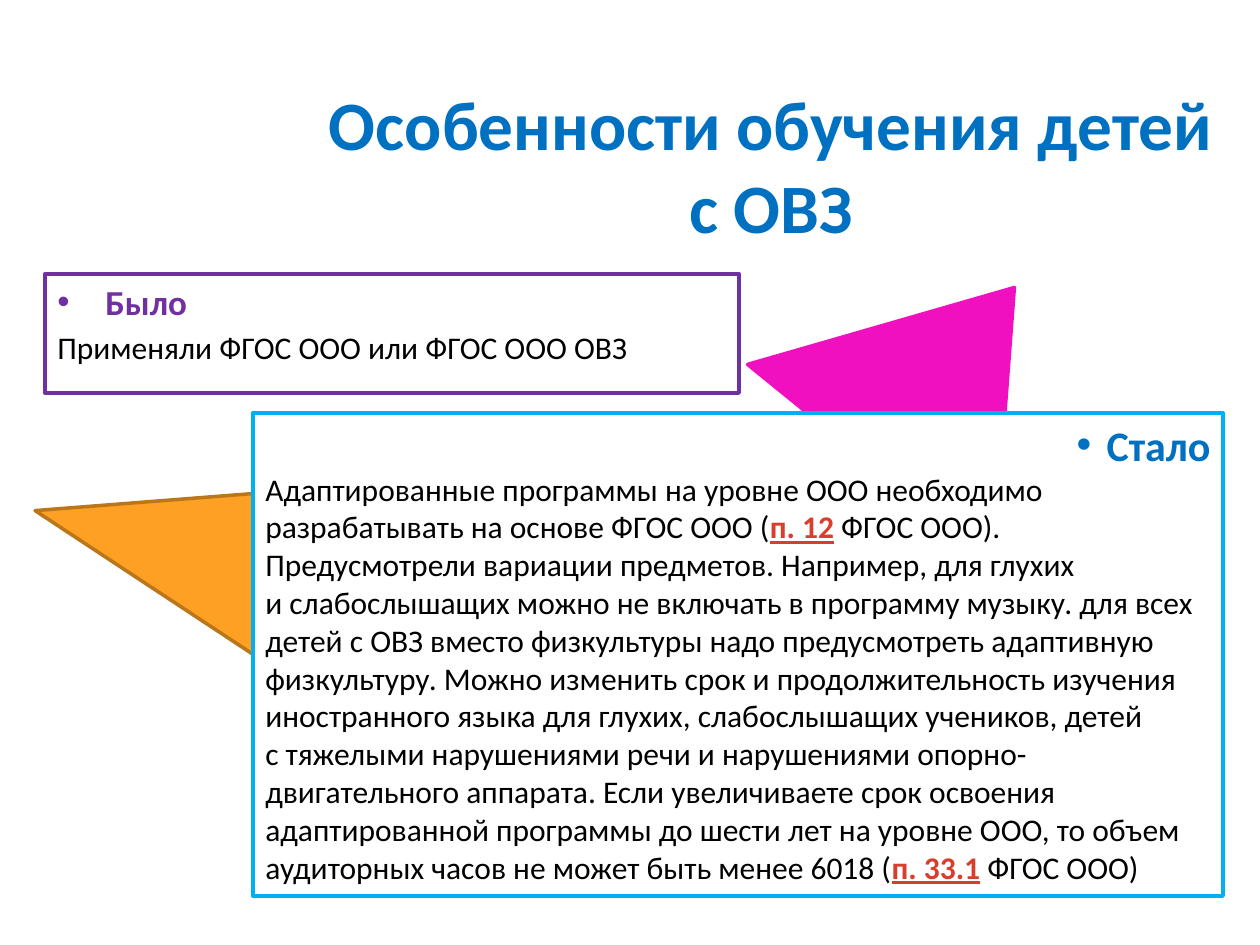
from dataclasses import dataclass

from lxml import etree
from pptx import Presentation
from pptx.dml.color import RGBColor
from pptx.enum.shapes import MSO_SHAPE
from pptx.enum.text import MSO_ANCHOR, MSO_AUTO_SIZE, PP_ALIGN
from pptx.oxml.ns import qn
from pptx.util import Emu, Pt

PX = 914400 // 126
NBSP = chr(160)
RECT, TRIANGLE = MSO_SHAPE.RECTANGLE, MSO_SHAPE.ISOSCELES_TRIANGLE
LEFT, CENTER, RIGHT = PP_ALIGN.LEFT, PP_ALIGN.CENTER, PP_ALIGN.RIGHT


@dataclass(frozen=True)
class Theme:
    font: str = "Calibri"
    white: str = "FFFFFF"
    black: str = "000000"
    blue: str = "0070C0"
    sky: str = "00B0F0"
    purple: str = "7030A0"
    red: str = "D83E2C"
    pink: str = "F010C0"
    orange: str = "FDA023"
    brown: str = "BB761A"
    title: float = 39.6
    after_head: int = 24
    before_head: int = 20
    body: int = 18


T = Theme()


def add_block(shape, box, fill, line, width, rotation=0):
    s = slide.shapes.add_shape(shape, *(Emu(v * PX) for v in box))
    s.shadow.inherit = False
    s.rotation = rotation
    s.fill.solid()
    s.fill.fore_color.rgb = RGBColor.from_string(fill)
    s.line.color.rgb = RGBColor.from_string(line)
    s.line.width = Pt(width)
    return s


def add_run(p, text, size, color, bold=False, underline=False):
    """Add a formatted run; a tilde in the text stands for a no-break space."""
    r = p.add_run()
    r.text = text.replace("~", NBSP)
    r.font.name = T.font
    r.font.size = Pt(size)
    r.font.bold = bold
    r.font.underline = underline
    r.font.color.rgb = RGBColor.from_string(color)


prs = Presentation()
prs.slide_width, prs.slide_height = Emu(1260 * PX), Emu(945 * PX)
slide = prs.slides.add_slide(prs.slide_layouts[5])

# Triangles behind the text boxes
add_block(TRIANGLE, (784, 262, 317, 228), T.pink, T.pink, 2, 39.1)
add_block(TRIANGLE, (47, 471, 486, 189), T.orange, T.brown, 2, 33.4)

# Title
title = slide.shapes.title
title.left, title.top, title.width, title.height = (
    Emu(v * PX) for v in (282, 85, 978, 159))
tf = title.text_frame
tf.word_wrap = True
tf.auto_size = MSO_AUTO_SIZE.NONE
tf.vertical_anchor = MSO_ANCHOR.MIDDLE
tf.paragraphs[0].alignment = CENTER
add_run(tf.paragraphs[0], "Особенности обучения детей с~ОВЗ", T.title, T.blue, True)

# Body runs as (text, is reference)
before_body = [("Применяли ФГОС ООО~или ФГОС ООО ОВЗ~", False)]
after_body = [
    ("Адаптированные программы на~уровне ООО необходимо "
     "разрабатывать на~основе ФГОС ООО (", False),
    ("п.~12", True),
    ("~ФГОС ООО). Предусмотрели вариации предметов. Например, для~глухих "
     "и~слабослышащих можно не~включать в~программу музыку. для~всех "
     "детей с~ОВЗ вместо физкультуры надо предусмотреть адаптивную "
     "физкультуру. Можно изменить срок и~продолжительность изучения "
     "иностранного языка для~глухих, слабослышащих учеников, детей "
     "с~тяжелыми нарушениями речи и~нарушениями опорно-двигательного "
     "аппарата. Если увеличиваете срок освоения адаптированной программы "
     "до~шести лет на~уровне ООО, то~объем аудиторных часов не~может быть "
     "менее 6018 (", False),
    ("п.~33.1", True),
    ("~ФГОС ООО)", False),
]

# Box, outline, heading, heading size, colour, alignment,
# hanging indents of heading and body, space before the body, body
panels = [
    ((45, 274, 694, 119), T.purple, "Было", T.before_head, T.purple, LEFT,
     (48, 48), 3.6, before_body),
    ((253, 413, 970, 483), T.sky, "Стало", T.after_head, T.blue, RIGHT,
     (30, 0), 0, after_body),
]
for box, line, heading, size, color, align, indents, gap, body in panels:
    tf = add_block(RECT, box, T.white, line, 2.25).text_frame
    tf.word_wrap = True
    tf.vertical_anchor = MSO_ANCHOR.TOP
    head, text = tf.paragraphs[0], tf.add_paragraph()
    for p, indent in zip((head, text), indents):
        pPr = p._p.get_or_add_pPr()
        pPr.set("marL", str(indent * PX))
        pPr.set("indent", str(-indent * PX))
    pPr = head._p.get_or_add_pPr()
    etree.SubElement(pPr, qn("a:buFont")).set("typeface", "Arial")
    etree.SubElement(pPr, qn("a:buChar")).set("char", "•")
    head.alignment, text.alignment = align, LEFT
    text.space_before = Pt(gap)
    add_run(head, heading, size, color, True)
    for words, is_reference in body:
        add_run(text, words, T.body, T.red if is_reference else T.black,
                is_reference, is_reference)

prs.save("out.pptx")
